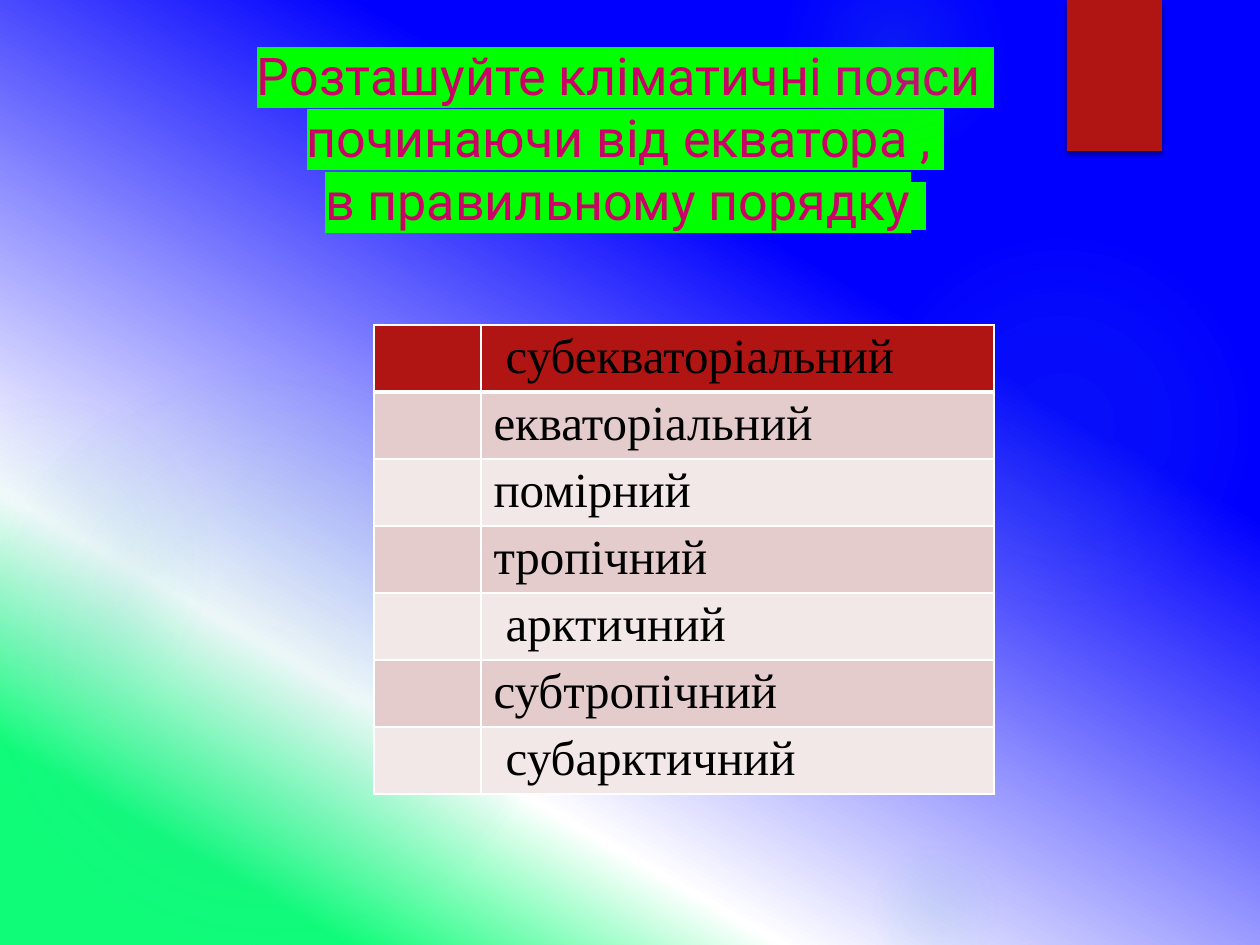
from lxml import etree
from pptx import Presentation
from pptx.dml.color import RGBColor
from pptx.enum.shapes import MSO_SHAPE
from pptx.enum.text import MSO_ANCHOR, MSO_AUTO_SIZE, PP_ALIGN
from pptx.oxml import parse_xml
from pptx.oxml.ns import nsdecls, qn
from pptx.util import Emu, Pt

OVAL, RECT = MSO_SHAPE.OVAL, MSO_SHAPE.RECTANGLE
TOP, CENTER, FIXED = MSO_ANCHOR.TOP, PP_ALIGN.CENTER, MSO_AUTO_SIZE.NONE
TITLE_ONLY = 5
EMU_PER_PX = 914400 / 126

COLORS = {
    "blue": "0000FF", "white": "FFFFFF", "green": "0FFC79", "glow": "50B9C1",
    "red": "B01513", "pink": "E4CCCC", "pale": "F2E8E7", "black": "000000",
    "title": "CC0066", "highlight": "00FF00",
}
TITLE_LINES = ["Розташуйте кліматичні пояси ", "починаючи від екватора , ",
               "в правильному порядку"]
ZONES = [" субекваторіальний", "екваторіальний", "помірний", "тропічний",
         " арктичний", "субтропічний", " субарктичний"]
# left, top, diameter, then (position, opacity) stops in percent
GLOWS = [
    (868, 231, 388, [(0, 7), (36, 6), (69, 0)]),
    (784, -63, 220, [(0, 14), (36, 7), (73, 0)]),
    (868, 840, 136, [(0, 9), (36, 5), (66, 0)]),
    (-21, 368, 577, [(0, 11), (36, 10), (75, 0)]),
    (-116, 399, 325, [(0, 8), (36, 8), (72, 0)]),
]


def px(n):
    return Emu(round(n * EMU_PER_PX))


def rgb(name):
    return RGBColor.from_string(COLORS[name])


def gradient(stops, direction):
    """Return a gradFill element from (position, color, opacity) stops in percent."""
    gs = "".join(
        f'<a:gs pos="{pos * 1000}"><a:srgbClr val="{COLORS[color]}">'
        f'<a:alpha val="{opacity * 1000}"/></a:srgbClr></a:gs>'
        for pos, color, opacity in stops)
    return parse_xml(f'<a:gradFill {nsdecls("a")} rotWithShape="1">'
                     f'<a:gsLst>{gs}</a:gsLst>{direction}</a:gradFill>')


def replace_gradient(fill, parent, stops, direction):
    fill.gradient()
    old = parent.find(qn("a:gradFill"))
    parent.replace(old, gradient(stops, direction))


def set_background(s):
    fill = s.background.fill
    fill.solid()
    bg_pr = s.element.cSld.find(qn("p:bg")).find(qn("p:bgPr"))
    replace_gradient(fill, bg_pr,
                     [(31, "blue", 100), (73, "white", 91), (88, "green", 100)],
                     '<a:lin ang="7200000" scaled="0"/>')


def add_plain_shape(s, kind, x, y, w, h):
    sp = s.shapes.add_shape(kind, px(x), px(y), px(w), px(h))
    sp.shadow.inherit = False
    sp.line.fill.background()
    return sp


def add_glow(s, x, y, size, stops):
    sp = add_plain_shape(s, OVAL, x, y, size, size)
    replace_gradient(sp.fill, sp.element.spPr,
                     [(pos, "glow", opacity) for pos, opacity in stops],
                     '<a:path path="circle"><a:fillToRect l="50000" t="50000" '
                     'r="50000" b="50000"/></a:path>')


def add_ribbon(s):
    sp = add_plain_shape(s, RECT, 1067, 0, 95, 151)
    sp.fill.solid()
    sp.fill.fore_color.rgb = rgb("red")
    sp.element.spPr.find(qn("a:effectLst")).append(parse_xml(
        f'<a:outerShdw {nsdecls("a")} blurRad="{Pt(3)}" dist="{Pt(2)}" dir="5400000">'
        f'<a:srgbClr val="{COLORS["black"]}"><a:alpha val="45000"/></a:srgbClr>'
        '</a:outerShdw>'))


def add_highlighted_run(p, text, font_name, color):
    r = p.add_run()
    r.text = text
    r.font.size = Pt(29.7)
    r.font.name = font_name
    r.font.color.rgb = rgb(color)
    highlight = parse_xml(f'<a:highlight {nsdecls("a")}>'
                          f'<a:srgbClr val="{COLORS["highlight"]}"/></a:highlight>')
    r.font.fill._xPr.find(qn("a:solidFill")).addnext(highlight)


def fill_title(s):
    title = s.shapes.title
    title.left, title.top, title.width, title.height = map(px, (35, 37, 1181, 180))
    tf = title.text_frame
    tf.word_wrap = True
    tf.auto_size = FIXED
    tf.vertical_anchor = TOP
    for i, line in enumerate(TITLE_LINES):
        p = tf.add_paragraph() if i else tf.paragraphs[0]
        p.alignment = CENTER
        add_highlighted_run(p, line, "Roboto", "title")
    add_highlighted_run(p, " ", "TeX Gyre Adventor", "white")


def set_borders(cell, top, bottom):
    """Draw white borders; top and bottom are widths in points."""
    tc_pr = cell._tc.get_or_add_tcPr()
    widths = {"lnL": 1, "lnR": 1, "lnT": top, "lnB": bottom}
    for i, (tag, width) in enumerate(widths.items()):
        ln = etree.Element(qn(f"a:{tag}"), w=str(Pt(width)))
        fill = etree.SubElement(ln, qn("a:solidFill"))
        etree.SubElement(fill, qn("a:srgbClr"), val=COLORS["white"])
        tc_pr.insert(i, ln)


def add_zone_table(s):
    col_widths, row_height = (107, 513), 67
    table = s.shapes.add_table(len(ZONES), 2, px(374), px(325), px(sum(col_widths)),
                               px(row_height * len(ZONES))).table
    for column, width in zip(table.columns, col_widths):
        column.width = px(width)
    for i, zone in enumerate(ZONES):
        table.rows[i].height = px(row_height)
        color = "red" if i == 0 else ("pale", "pink")[i % 2]
        for cell in table.rows[i].cells:
            cell.fill.solid()
            cell.fill.fore_color.rgb = rgb(color)
            cell.margin_top = cell.margin_bottom = px(5)
            set_borders(cell, 3 if i == 1 else 1, 3 if i == 0 else 1)
        name_cell = table.cell(i, 1)
        name_cell.text = zone
        font = name_cell.text_frame.paragraphs[0].font
        font.size = Pt(28)
        font.name = "Times New Roman"
        font.bold = False
        font.color.rgb = rgb("black")


def main():
    prs = Presentation()
    prs.slide_width, prs.slide_height = px(1260), px(945)
    s = prs.slides.add_slide(prs.slide_layouts[TITLE_ONLY])
    set_background(s)
    for glow in GLOWS:
        add_glow(s, *glow)
    add_ribbon(s)
    fill_title(s)
    add_zone_table(s)
    prs.save("out.pptx")


if __name__ == "__main__":
    main()
